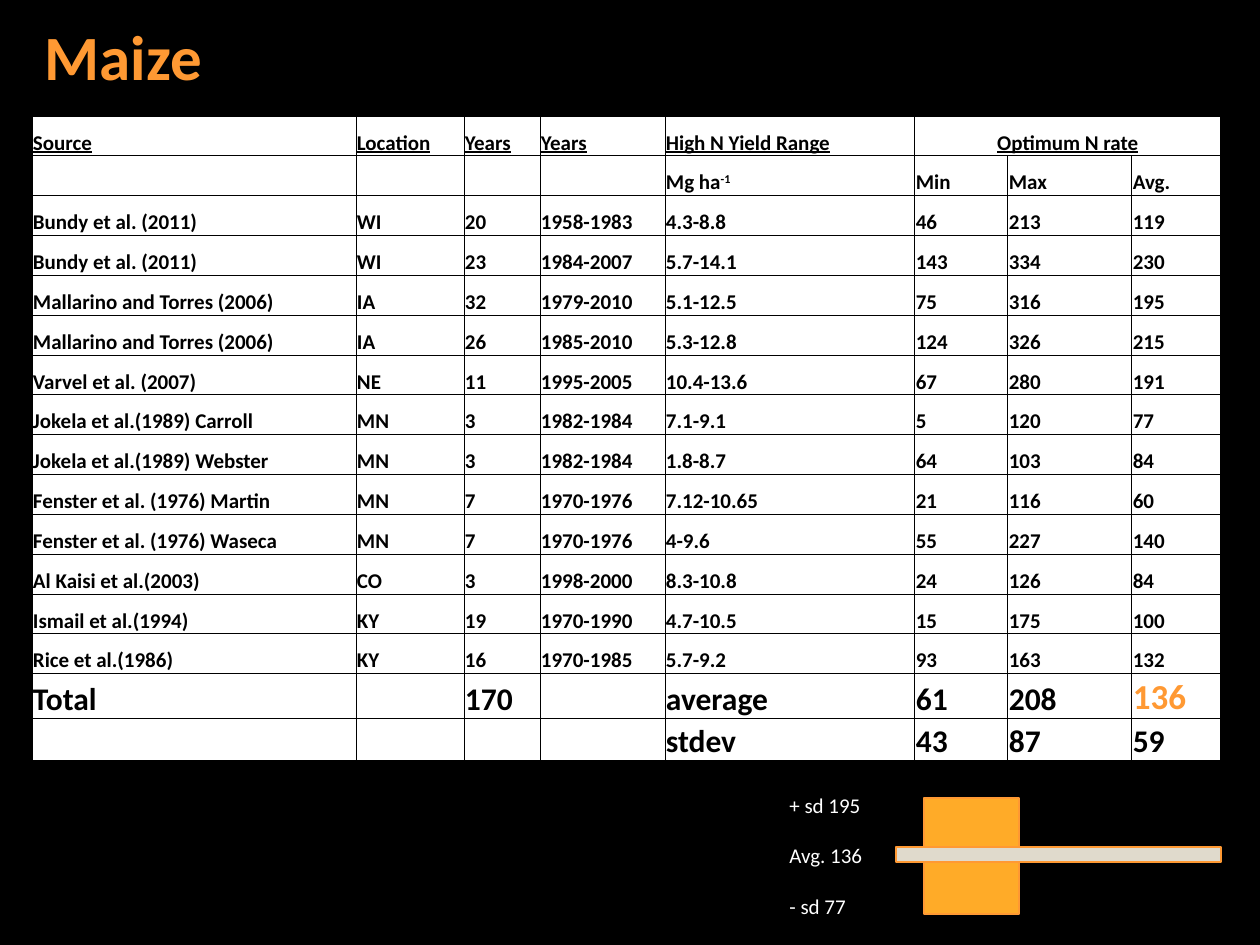
from dataclasses import dataclass

import pptx
import pptx.dml.color
import pptx.enum.shapes
import pptx.enum.text
import pptx.oxml
import pptx.oxml.ns
import pptx.util

PX = 914400 / 126
FONT = "Calibri"
BLACK, WHITE, ORANGE = "000000", "FFFFFF", "FF9933"
ANCHOR = pptx.enum.text.MSO_ANCHOR
ALIGN = pptx.enum.text.PP_ALIGN


@dataclass
class Box:
    x: int
    y: int
    w: int
    h: int


@dataclass
class Bar:
    box: Box
    fill: str


@dataclass
class Style:
    size: int
    color: str = BLACK
    bold: bool = True
    underline: bool = False


TABLE = Box(32, 116, 1189, 645)
COLUMNS = [324, 108, 76, 125, 250, 93, 124, 89]
BODY_HEIGHT = 558
SUMMARY_HEIGHTS = [45, 42]

HEADINGS = [
    ["Source", "Location", "Years", "Years", "High N Yield Range", "Optimum N rate", "", ""],
    ["", "", "", "", "Mg ha^-1", "Min", "Max", "Avg."],
]
STUDIES = [
    ["Bundy et al. (2011)", "WI", "20", "1958-1983", "4.3-8.8", "46", "213", "119"],
    ["Bundy et al. (2011)", "WI", "23", "1984-2007", "5.7-14.1", "143", "334", "230"],
    ["Mallarino and Torres (2006)", "IA", "32", "1979-2010", "5.1-12.5", "75", "316", "195"],
    ["Mallarino and Torres (2006)", "IA", "26", "1985-2010", "5.3-12.8", "124", "326", "215"],
    ["Varvel et al. (2007)", "NE", "11", "1995-2005", "10.4-13.6", "67", "280", "191"],
    ["Jokela et al.(1989) Carroll", "MN", "3", "1982-1984", "7.1-9.1", "5", "120", "77"],
    ["Jokela et al.(1989) Webster", "MN", "3", "1982-1984", "1.8-8.7", "64", "103", "84"],
    ["Fenster et al. (1976) Martin", "MN", "7", "1970-1976", "7.12-10.65", "21", "116", "60"],
    ["Fenster et al. (1976) Waseca", "MN", "7", "1970-1976", "4-9.6", "55", "227", "140"],
    ["Al Kaisi et al.(2003)", "CO", "3", "1998-2000", "8.3-10.8", "24", "126", "84"],
    ["Ismail et al.(1994)", "KY", "19", "1970-1990", "4.7-10.5", "15", "175", "100"],
    ["Rice et al.(1986)", "KY", "16", "1970-1985", "5.7-9.2", "93", "163", "132"],
]
SUMMARY = [
    ["Total", "", "170", "", "average", "61", "208", "136"],
    ["", "", "", "", "stdev", "43", "87", "59"],
]
BARS = [
    Bar(Box(924, 798, 95, 116), "FFAB28"),
    Bar(Box(896, 847, 325, 15), "E0DACC"),
]
RANGE_LABELS = ["+ sd 195", "Avg. 136", "- sd 77"]


def px(n: int) -> int:
    return round(n * PX)


def place(box: Box) -> tuple:
    return px(box.x), px(box.y), px(box.w), px(box.h)


def rgb(value: str):
    return pptx.dml.color.RGBColor.from_string(value)


def paint(target, color: str) -> None:
    target.fill.solid()
    target.fill.fore_color.rgb = rgb(color)


def format_paragraph(p, style: Style) -> None:
    p.font.name = FONT
    p.font.size = pptx.util.Pt(style.size)
    p.font.bold = style.bold
    p.font.underline = style.underline
    p.font.color.rgb = rgb(style.color)


def add_borders(cell) -> None:
    tc_pr = cell._tc.get_or_add_tcPr()
    for i, side in enumerate("LRTB"):
        tc_pr.insert(i, pptx.oxml.parse_xml(
            f'<a:ln{side} {pptx.oxml.ns.nsdecls("a")} w="6350"><a:solidFill>'
            f'<a:srgbClr val="{BLACK}"/></a:solidFill></a:ln{side}>'))


def fill_cell(cell, text: str, style: Style) -> None:
    cell.margin_left = cell.margin_right = cell.margin_top = px(1)
    cell.margin_bottom = 0
    cell.vertical_anchor = ANCHOR.BOTTOM
    paint(cell, WHITE)
    add_borders(cell)
    p = cell.text_frame.paragraphs[0]
    format_paragraph(p, style)
    base, _, superscript = text.partition("^")
    if base:
        p.add_run().text = base
    if superscript:
        r = p.add_run()
        r.text = superscript
        r.font._element.set("baseline", "30000")


def cell_style(row: int, col: int) -> Style:
    summary_start = len(HEADINGS) + len(STUDIES)
    if row < summary_start:
        return Style(12, underline=row == 0)
    if (row, col) == (summary_start, len(COLUMNS) - 1):
        return Style(20, ORANGE)
    return Style(18)


def add_yield_table(s) -> None:
    rows = HEADINGS + STUDIES + SUMMARY
    table = s.shapes.add_table(len(rows), len(COLUMNS), *place(TABLE)).table
    table.first_row = table.horz_banding = False
    for column, width in zip(table.columns, COLUMNS):
        column.width = px(width)
    body_count = len(HEADINGS) + len(STUDIES)
    heights = [px(BODY_HEIGHT) // body_count] * body_count + [px(h) for h in SUMMARY_HEIGHTS]
    for row, height in zip(table.rows, heights):
        row.height = height
    for i, texts in enumerate(rows):
        for j, text in enumerate(texts):
            fill_cell(table.cell(i, j), text, cell_style(i, j))
    table.cell(0, 5).merge(table.cell(0, 7))
    table.cell(0, 5).text_frame.paragraphs[0].alignment = ALIGN.CENTER


def add_title(s) -> None:
    title = s.shapes.title
    title.left, title.top, title.width, title.height = place(Box(32, 10, 1058, 89))
    tf = title.text_frame
    tf.text = "Maize"
    tf.vertical_anchor = ANCHOR.BOTTOM
    tf.auto_size = pptx.enum.text.MSO_AUTO_SIZE.NONE
    p = tf.paragraphs[0]
    p.alignment = ALIGN.LEFT
    format_paragraph(p, Style(36, ORANGE))


def add_bar(s, bar: Bar) -> None:
    sp = s.shapes.add_shape(pptx.enum.shapes.MSO_SHAPE.RECTANGLE, *place(bar.box))
    sp.shadow.inherit = False
    paint(sp, bar.fill)
    sp.line.color.rgb = rgb(ORANGE)
    sp.line.width = pptx.util.Pt(1.5)


def add_range_labels(s) -> None:
    tf = s.shapes.add_textbox(*place(Box(777, 786, 105, 140))).text_frame
    tf.word_wrap = True
    for i, label in enumerate(RANGE_LABELS):
        p = tf.add_paragraph() if i else tf.paragraphs[0]
        p.text = label
        p.space_before = pptx.util.Pt(14.6 if i else 0)
        format_paragraph(p, Style(12, WHITE, bold=False))


def main() -> None:
    prs = pptx.Presentation()
    prs.slide_width, prs.slide_height = px(1260), px(945)
    s = prs.slides.add_slide(prs.slide_layouts[5])
    paint(s.background, BLACK)
    add_title(s)
    add_yield_table(s)
    for bar in BARS:
        add_bar(s, bar)
    add_range_labels(s)
    prs.save("out.pptx")


if __name__ == "__main__":
    main()
